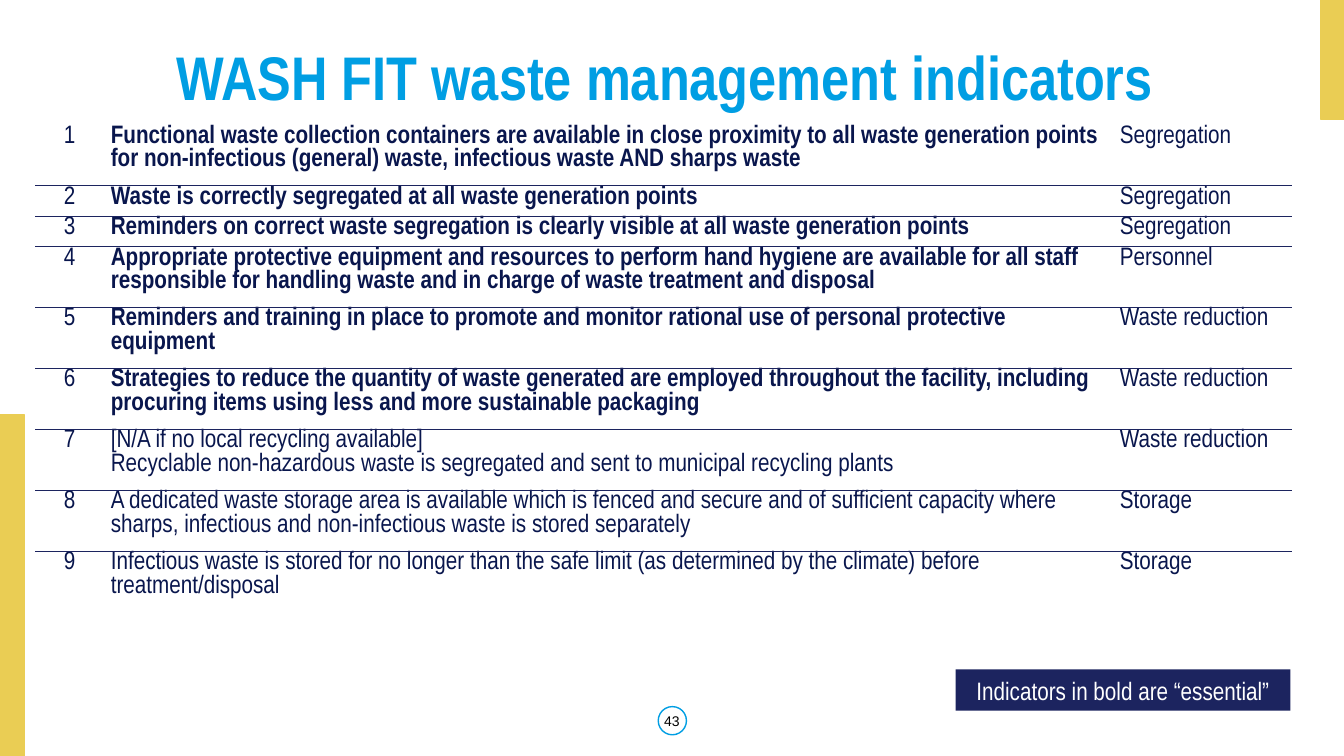
from lxml import etree
from pptx import Presentation
from pptx.dml.color import RGBColor
from pptx.enum.shapes import MSO_SHAPE
from pptx.enum.text import MSO_ANCHOR, PP_ALIGN
from pptx.oxml.ns import qn
from pptx.util import Inches, Pt

RECTANGLE, OVAL = MSO_SHAPE.RECTANGLE, MSO_SHAPE.OVAL
LEFT, CENTER = PP_ALIGN.LEFT, PP_ALIGN.CENTER
MIDDLE, BOTTOM = MSO_ANCHOR.MIDDLE, MSO_ANCHOR.BOTTOM

YELLOW, BLUE, NAVY, INK = "EACD54", "009EE3", "1C245F", "09164D"
BLACK, WHITE = "000000", "FFFFFF"
NARROW = "Arial Narrow"
GRID_COLUMNS, GRID_ROWS = 133.33, 75
LAST_ESSENTIAL = 6

INDICATORS = [
    ("Functional waste collection containers are available in close proximity to all waste "
     "generation points for non-infectious (general) waste, infectious waste AND sharps waste",
     "Segregation", 2),
    ("Waste is correctly segregated at all waste generation points", "Segregation", 1),
    ("Reminders on correct waste segregation is clearly visible at all waste generation points",
     "Segregation", 1),
    ("Appropriate protective equipment and resources to perform hand hygiene are available for "
     "all staff responsible for handling waste and in charge of waste treatment and disposal",
     "Personnel", 2),
    ("Reminders and training in place to promote and monitor rational use of personal "
     "protective equipment", "Waste reduction", 2),
    ("Strategies to reduce the quantity of waste generated are employed throughout the "
     "facility, including procuring items using less and more sustainable packaging",
     "Waste reduction", 2),
    ("[N/A if no local recycling available] \vRecyclable non-hazardous waste is segregated and "
     "sent to municipal recycling plants", "Waste reduction", 2),
    ("A dedicated waste storage area is available which is fenced and secure and of sufficient "
     "capacity where sharps, infectious and non-infectious waste is stored separately",
     "Storage", 2),
    ("Infectious waste is stored for no longer than the safe limit (as determined by the "
     "climate) before treatment/disposal", "Storage", 2),
]


def color(value):
    return RGBColor.from_string(value)


class SlideBuilder:
    """Draws styled elements on one slide, measured in grid columns and rows."""

    def __init__(self, presentation):
        self.column = int(presentation.slide_width / GRID_COLUMNS)
        self.row = int(presentation.slide_height / GRID_ROWS)
        self.slide = presentation.slides.add_slide(presentation.slide_layouts[6])

    def place(self, left, top, width, height):
        return [round(length * unit) for length, unit in
                zip((left, top, width, height), (self.column, self.row) * 2)]

    def fill_text(self, frame, text, size, text_color, font=NARROW, bold=False, align=CENTER):
        frame.word_wrap = True
        frame.text = text
        paragraph = frame.paragraphs[0]
        paragraph.alignment = align
        paragraph.font.name = font
        paragraph.font.size = Pt(size)
        paragraph.font.bold = bold
        paragraph.font.color.rgb = color(text_color)
        return paragraph

    def shape(self, kind, box, fill=None, line=None):
        shape = self.slide.shapes.add_shape(kind, *self.place(*box))
        shape.shadow.inherit = False
        if fill:
            shape.fill.solid()
            shape.fill.fore_color.rgb = color(fill)
        else:
            shape.fill.background()
        if line:
            shape.line.color.rgb = color(line)
            shape.line.width = Pt(1)
        else:
            shape.line.fill.background()
        return shape

    def text(self, box, text, size, text_color, anchor=MIDDLE, **style):
        frame = self.slide.shapes.add_textbox(*self.place(*box)).text_frame
        frame.vertical_anchor = anchor
        return self.fill_text(frame, text, size, text_color, **style)

    def border(self, cell, side, line=None):
        properties = cell._tc.get_or_add_tcPr()
        edge = etree.SubElement(properties, qn(f"a:ln{side}"), w=str(Pt(1)))
        if line:
            fill = etree.SubElement(edge, qn("a:solidFill"))
            etree.SubElement(fill, qn("a:srgbClr"), val=line)
        else:
            etree.SubElement(edge, qn("a:noFill"))

    def table(self, left, top, widths, line_height, indicators):
        heights = [lines * line_height for *_, lines in indicators]
        box = self.place(left, top, sum(widths), sum(heights))
        table = self.slide.shapes.add_table(len(heights), len(widths), *box).table
        table.first_row = table.horz_banding = False
        for column, width in zip(table.columns, widths):
            column.width = round(width * self.column)
        last = len(indicators) - 1
        for index, (indicator, topic, _) in enumerate(indicators):
            table.rows[index].height = round(heights[index] * self.row)
            essential = index < LAST_ESSENTIAL
            contents = ((str(index + 1), CENTER, False), (indicator, LEFT, essential),
                        (topic, LEFT, False))
            for cell, (text, align, bold) in zip(table.rows[index].cells, contents):
                cell.margin_left = cell.margin_right = round(0.7 * self.column)
                cell.margin_top = cell.margin_bottom = 0
                self.fill_text(cell.text_frame, text, 18, INK, bold=bold, align=align)
                self.border(cell, "L")
                self.border(cell, "R")
                self.border(cell, "T", NAVY if index > 0 else None)
                self.border(cell, "B", NAVY if index < last else None)
                cell.fill.background()


def main():
    presentation = Presentation()
    presentation.slide_width, presentation.slide_height = Inches(13.33), Inches(7.5)
    builder = SlideBuilder(presentation)

    for accent in ((0, 41.1, 2.4, 33.9), (131, 0, 2.33, 11.8)):
        builder.shape(RECTANGLE, accent, YELLOW, YELLOW)
    builder.shape(OVAL, (65.3, 70.1, 2.8, 2.8), line=BLUE)
    builder.text((0, 69.5, GRID_COLUMNS, 4), "43", 10, BLACK, font="Arial")

    builder.table(3.5, 12.4, (6.8, 100.1, 17.8), 3.02, INDICATORS)
    title = builder.text((9.2, 4, 115, 7.8), "WASH FIT waste management indicators ", 44, BLUE,
                         anchor=BOTTOM, bold=True)
    title.line_spacing = 0.9

    note = builder.shape(RECTANGLE, (94.8, 66.4, 33.2, 4.1), NAVY)
    note.text_frame.vertical_anchor = MIDDLE
    builder.fill_text(note.text_frame, "Indicators in bold are “essential”", 18, WHITE)

    presentation.save("out.pptx")


if __name__ == "__main__":
    main()
